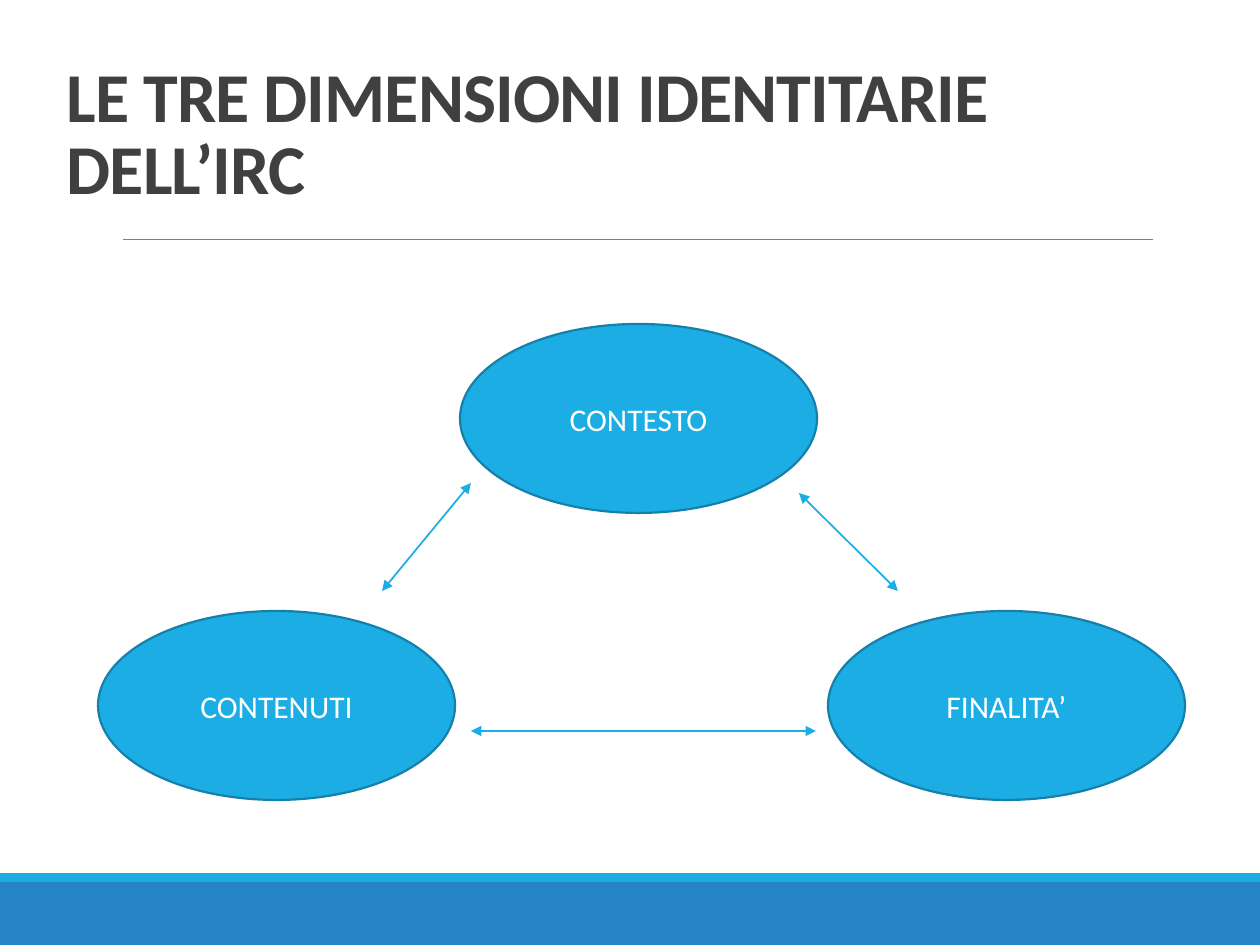
from lxml import etree
from pptx import Presentation, util as u
from pptx.dml.color import RGBColor
from pptx.enum import shapes, text
from pptx.oxml.ns import qn

EMU_PER_PX = 914400 / 126
FONT = "Calibri"
SKY, BLUE, RIM, GREY, INK, WHITE = "1CADE4", "2683C6", "1580A9", "808080", "404040", "FFFFFF"
OVAL_SIZE = (357, 189)
DIMENSIONS = {"CONTESTO": (460, 324), "CONTENUTI": (98, 611), "FINALITA’": (828, 611)}
LINKS = [(471, 483, 382, 591), (799, 493, 898, 591), (471, 731, 816, 731)]


def px(*lengths):
    """Turn pixel lengths into EMU."""
    return [u.Emu(round(length * EMU_PER_PX)) for length in lengths]


def colour(hex_code):
    """Turn a hex string into a colour."""
    return RGBColor.from_string(hex_code)


def apply(target, values):
    """Set each attribute of the target from a dict."""
    for name, value in values.items():
        setattr(target, name, value)


def write(frame, wording, paragraph_format, size, ink, bold=False):
    """Put one formatted paragraph in a text frame."""
    frame.text = wording
    paragraph = frame.paragraphs[0]
    apply(paragraph, paragraph_format)
    run = paragraph.runs[0]
    apply(run.font, {"name": FONT, "size": u.Pt(size), "bold": bold})
    run.font.color.rgb = colour(ink)
    return run


def add_filled(slide, kind, box, fill, rim=None):
    """Add a flat preset shape, outlined when a rim colour is given."""
    figure = slide.shapes.add_shape(kind, *px(*box))
    figure.shadow.inherit = False
    figure.fill.solid()
    figure.fill.fore_color.rgb = colour(fill)
    if rim:
        figure.line.color.rgb = colour(rim)
        figure.line.width = u.Pt(1.25)
    else:
        figure.line.fill.background()
    return figure


def add_rule(slide, ends, ink, width, arrows=False):
    """Add a straight line, with arrowheads at both ends on request."""
    rule = slide.shapes.add_connector(shapes.MSO_CONNECTOR.STRAIGHT, *px(*ends))
    rule.line.color.rgb = colour(ink)
    rule.line.width = u.Pt(width)
    if arrows:
        for end in ("a:headEnd", "a:tailEnd"):
            etree.SubElement(rule.line._get_or_add_ln(), qn(end), type="triangle")
    etree.SubElement(rule._element.spPr, qn("a:effectLst"))


def add_title(slide, wording):
    """Place and format the title placeholder."""
    title = slide.shapes.title
    apply(title, dict(zip(("left", "top", "width", "height"), px(54, 15, 1181, 200))))
    apply(title.text_frame, {
        "word_wrap": True,
        "auto_size": text.MSO_AUTO_SIZE.NONE,
        "vertical_anchor": text.MSO_ANCHOR.BOTTOM,
    })
    layout = {"alignment": text.PP_ALIGN.LEFT, "line_spacing": 0.85}
    run = write(title.text_frame, wording, layout, 40, INK, bold=True)
    run.font._element.set("spc", "-50")


def add_dimension(slide, wording, corner):
    """Add one labelled oval."""
    oval = add_filled(slide, shapes.MSO_SHAPE.OVAL, corner + OVAL_SIZE, SKY, RIM)
    oval.text_frame.vertical_anchor = text.MSO_ANCHOR.MIDDLE
    write(oval.text_frame, wording, {"alignment": text.PP_ALIGN.CENTER}, 18, WHITE)


def main():
    """Build the slide and save it."""
    deck = Presentation()
    deck.slide_width, deck.slide_height = px(1260, 945)
    slide = deck.slides.add_slide(deck.slide_layouts[5])
    add_filled(slide, shapes.MSO_SHAPE.RECTANGLE, (0, 882, 1260, 63), BLUE)
    add_filled(slide, shapes.MSO_SHAPE.RECTANGLE, (0, 873, 1260, 9), SKY)
    add_rule(slide, (123, 239, 1153, 239), GREY, 0.5)
    add_title(slide, "LE TRE DIMENSIONI IDENTITARIE DELL’IRC")
    for wording, corner in DIMENSIONS.items():
        add_dimension(slide, wording, corner)
    for ends in LINKS:
        add_rule(slide, ends, SKY, 1, arrows=True)
    deck.save("out.pptx")


if __name__ == "__main__":
    main()
